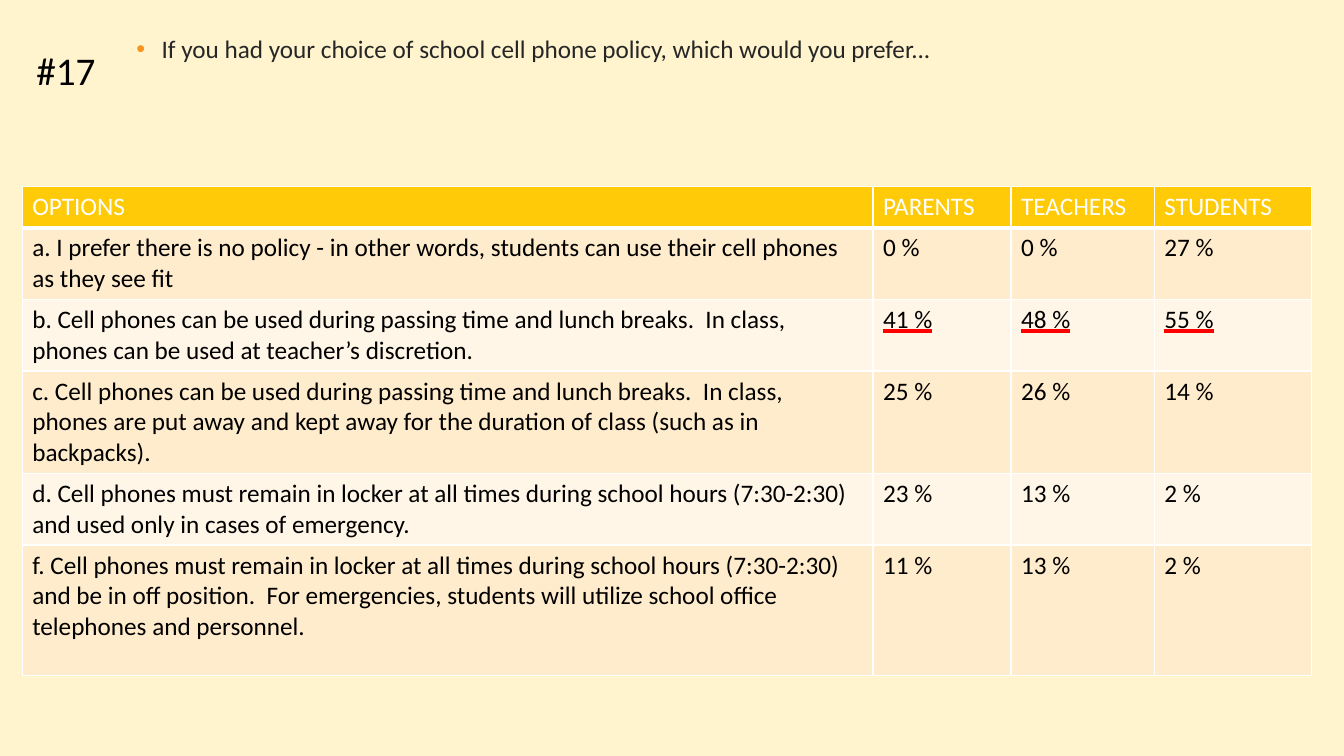
from lxml.etree import SubElement
from pptx import Presentation
from pptx.dml.color import RGBColor
from pptx.enum.text import MSO_ANCHOR, MSO_UNDERLINE, PP_ALIGN
from pptx.oxml import parse_xml
from pptx.oxml.ns import nsdecls, qn
from pptx.util import Cm, Pt

HEADS = ["OPTIONS", "PARENTS", "TEACHERS", "STUDENTS"]
ROWS = [
    ("a. I prefer there is no policy - in other words, students can use "
     "their cell phones as they see fit", 0, 0, 27),
    ("b. Cell phones can be used during passing time and lunch breaks.  "
     "In class, phones can be used at teacher’s discretion.", 41, 48, 55),
    ("c. Cell phones can be used during passing time and lunch breaks.  "
     "In class, phones are put away and kept away for the duration of class "
     "(such as in backpacks).", 25, 26, 14),
    ("d. Cell phones must remain in locker at all times during school hours "
     "(7:30-2:30) and used only in cases of emergency.", 23, 13, 2),
    ("f. Cell phones must remain in locker at all times during school hours "
     "(7:30-2:30) and be in off position.  For emergencies, students will "
     "utilize school office telephones and personnel.", 11, 13, 2),
]
WIDTHS = [21.44, 3.48, 3.61, 3.96]
HEIGHTS = [1.04, 1.79, 1.79, 2.55, 1.8, 3.28]
TOP_ROW = 2  # the choice with most votes


def color(code):
    return RGBColor.from_string(code)


def solid(parent, tag, code):
    """Add a child that holds a solid fill, and return it."""
    node = SubElement(parent, qn(tag))
    fill = SubElement(node, qn("a:solidFill"))
    SubElement(fill, qn("a:srgbClr"), val=code)
    return node


class Deck:
    font = "Calibri"
    black, white, red = "000000", "FFFFFF", "FF0000"
    head, bands = "FFCA08", ("FFF6E7", "FFECCC")

    def __init__(self):
        self.prs = Presentation()
        self.prs.slide_width, self.prs.slide_height = Cm(33.87), Cm(19.05)
        self.slide = self.prs.slides.add_slide(self.prs.slide_layouts[1])
        back = self.slide.background.fill
        back.solid()
        back.fore_color.rgb = color("FFF4CE")

    def place(self, shape, left, top, width, height):
        shape.left, shape.top = Cm(left), Cm(top)
        shape.width, shape.height = Cm(width), Cm(height)

    def add_text(self, para, text, size, code, marked=False):
        run = para.add_run()
        run.text = text
        font = run.font
        font.name, font.size, font.bold = self.font, Pt(size), False
        font.color.rgb = color(code)
        if marked:
            font.underline = MSO_UNDERLINE.HEAVY_LINE
            props = run._r.get_or_add_rPr()
            line = solid(props, "a:uFill", self.red)
            props.find(qn("a:latin")).addprevious(line)

    def title(self, text, *box):
        shape = self.slide.shapes.title
        self.place(shape, *box)
        frame = shape.text_frame
        frame.word_wrap = False
        frame.vertical_anchor = MSO_ANCHOR.MIDDLE
        para = frame.paragraphs[0]
        para.alignment = PP_ALIGN.LEFT
        self.add_text(para, text, 28, self.black)

    def body(self, text, *box):
        shape = self.slide.placeholders[1]
        self.place(shape, *box)
        para = shape.text_frame.paragraphs[0]
        props = para._p.get_or_add_pPr()
        props.set("marL", str(Cm(0.64)))
        props.set("indent", str(Cm(-0.64)))
        props.append(parse_xml(
            f'<a:buClr {nsdecls("a")}><a:srgbClr val="F8931D"/></a:buClr>'))
        SubElement(props, qn("a:buFont"), typeface="Arial")
        SubElement(props, qn("a:buChar"), char="•")
        para.space_before = Pt(10)
        self.add_text(para, text, 18, "262626")

    def cell(self, cell, text, row, marked):
        props = cell._tc.get_or_add_tcPr()
        for side in "LRTB":
            thick = (row, side) in ((0, "B"), (1, "T"))
            line = solid(props, f"a:ln{side}", self.white)
            line.set("w", str(Pt(3 if thick else 1)))
        cell.fill.solid()
        cell.fill.fore_color.rgb = color(self.bands[row % 2] if row else self.head)
        self.add_text(cell.text_frame.paragraphs[0], text, 18,
                      self.black if row else self.white, marked)

    def table(self, rows, left, top):
        grid = self.slide.shapes.add_table(
            len(rows), len(WIDTHS), Cm(left), Cm(top),
            Cm(sum(WIDTHS)), Cm(sum(HEIGHTS))).table
        for col, width in zip(grid.columns, WIDTHS):
            col.width = Cm(width)
        for r, (row, height) in enumerate(zip(rows, HEIGHTS)):
            grid.rows[r].height = Cm(height)
            for c, text in enumerate(row):
                self.cell(grid.cell(r, c), text, r, r == TOP_ROW and c > 0)


def main():
    deck = Deck()
    deck.body("If you had your choice of school cell phone policy, "
              "which would you prefer...", 3.18, 0.71, 30.35, 2.87)
    deck.title("#17", 0.66, 1.04, 2.03, 1.45)
    votes = [[text] + [f"{n} %" for n in nums] for text, *nums in ROWS]
    deck.table([HEADS] + votes, 0.56, 4.7)
    deck.prs.save("out.pptx")


if __name__ == "__main__":
    main()
